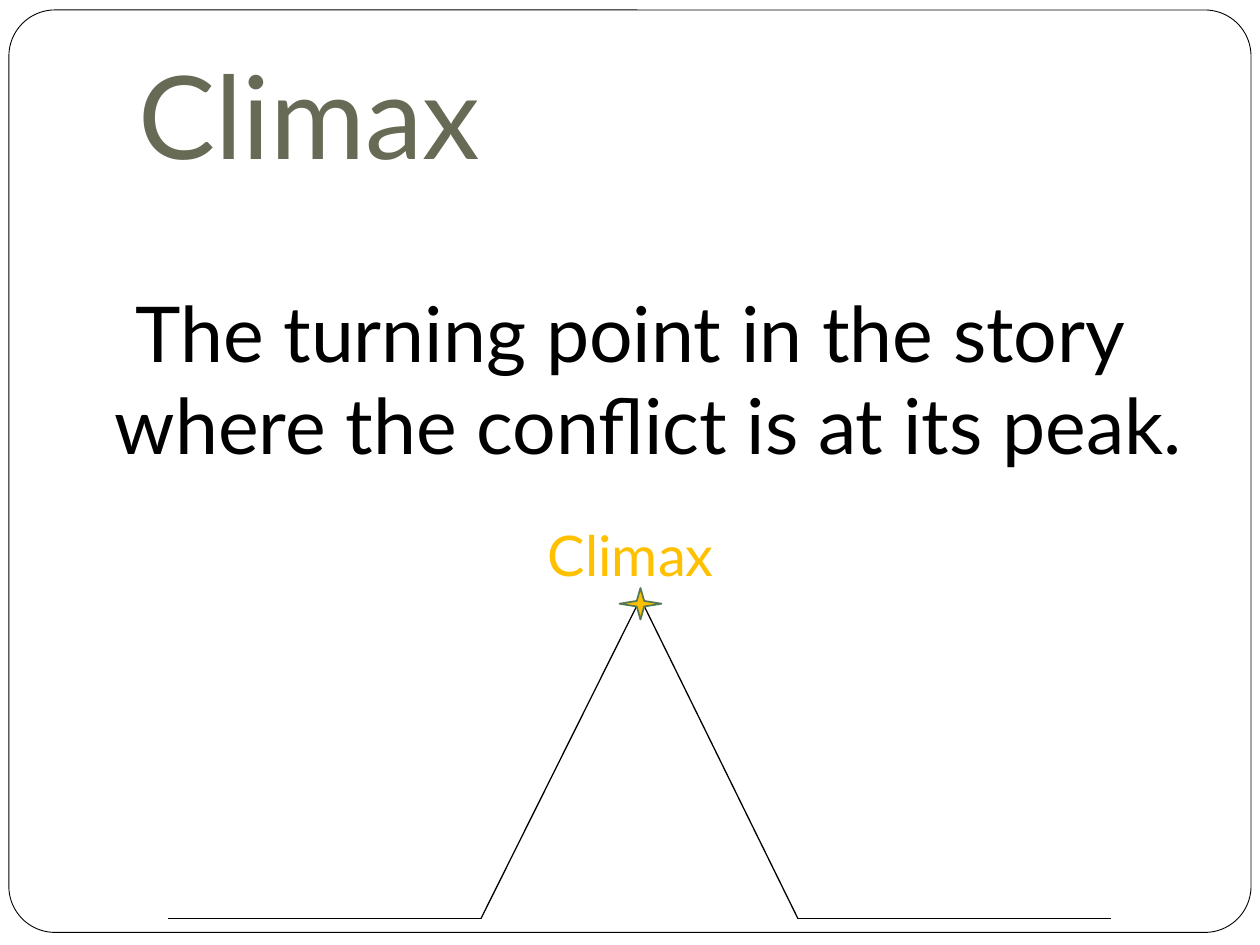
from itertools import pairwise
from lxml import etree
from pptx import Presentation, util as u
from pptx.dml.color import RGBColor
from pptx.enum import shapes, text
from pptx.oxml import ns

BLACK = RGBColor(0x00, 0x00, 0x00)
WHITE = RGBColor(0xFF, 0xFF, 0xFF)
OLIVE = RGBColor(0x67, 0x6A, 0x55)
GOLD = RGBColor(0xFF, 0xC0, 0x00)
GREEN = RGBColor(0x54, 0x79, 0x57)

prs = Presentation()
prs.slide_width, prs.slide_height = u.Inches(10), u.Inches(7.5)
COL, ROW = prs.slide_width / 120, prs.slide_height / 90
s = prs.slides.add_slide(prs.slide_layouts[6])


def grid(x, y, w, h):
    return [round(v) for v in (x * COL, y * ROW, w * COL, h * ROW)]


def add_preset(kind, box, fill, line, width):
    sp = s.shapes.add_shape(kind, *grid(*box))
    sp.shadow.inherit = False
    sp.fill.solid()
    sp.fill.fore_color.rgb = fill
    sp.line.color.rgb = line
    sp.line.width = u.Pt(width)
    return sp


frame = add_preset(shapes.MSO_SHAPE.ROUNDED_RECTANGLE,
                   (0.85, 0.95, 118.3, 87.85), WHITE, BLACK, 0.5)
frame.adjustments[0] = 0.05

plot = s.shapes.add_group_shape()
points = [(16, 87.5), (45.8, 87.5), (61, 57), (76, 87.5), (105.8, 87.5)]
for (x1, y1), (x2, y2) in pairwise(points):
    c = plot.shapes.add_connector(shapes.MSO_CONNECTOR.STRAIGHT,
                                  *grid(x1, y1, x2, y2))
    c.line.color.rgb = BLACK
    c.line.width = u.Pt(0.75)
    etree.SubElement(c._element.spPr, ns.qn("a:effectLst"))

add_preset(shapes.MSO_SHAPE.STAR_4_POINT, (59, 56, 4, 3), GOLD, GREEN, 1)

texts = [
    ("Climax", (12, 3.6, 102, 15), 66, OLIVE,
     {"word_wrap": True, "vertical_anchor": text.MSO_ANCHOR.BOTTOM,
      "margin_bottom": u.Inches(0.1)}, {}, {}),
    ("The turning point in the story where the conflict is at its peak.",
     (6, 21, 108, 30), 44, BLACK,
     {"word_wrap": True, "vertical_anchor": text.MSO_ANCHOR.MIDDLE},
     {"alignment": text.PP_ALIGN.CENTER, "space_before": u.Pt(5.8)},
     {"marL": u.Inches(0.3), "indent": u.Inches(-0.3)}),
    ("Climax", (51, 49, 19.8, 7.7), 32, GOLD,
     {"word_wrap": False, "auto_size": text.MSO_AUTO_SIZE.SHAPE_TO_FIT_TEXT},
     {}, {}),
]
for words, box, size, color, frame_format, para_format, indents in texts:
    tf = s.shapes.add_textbox(*grid(*box)).text_frame
    p = tf.paragraphs[0]
    r = p.add_run()
    r.text = words
    r.font.color.rgb = color
    font_format = {"name": "Lato", "size": u.Pt(size)}
    for target, values in ((tf, frame_format), (p, para_format), (r.font, font_format)):
        for name, value in values.items():
            setattr(target, name, value)
    for name, value in indents.items():
        p._p.get_or_add_pPr().set(name, str(value))

prs.save("out.pptx")
